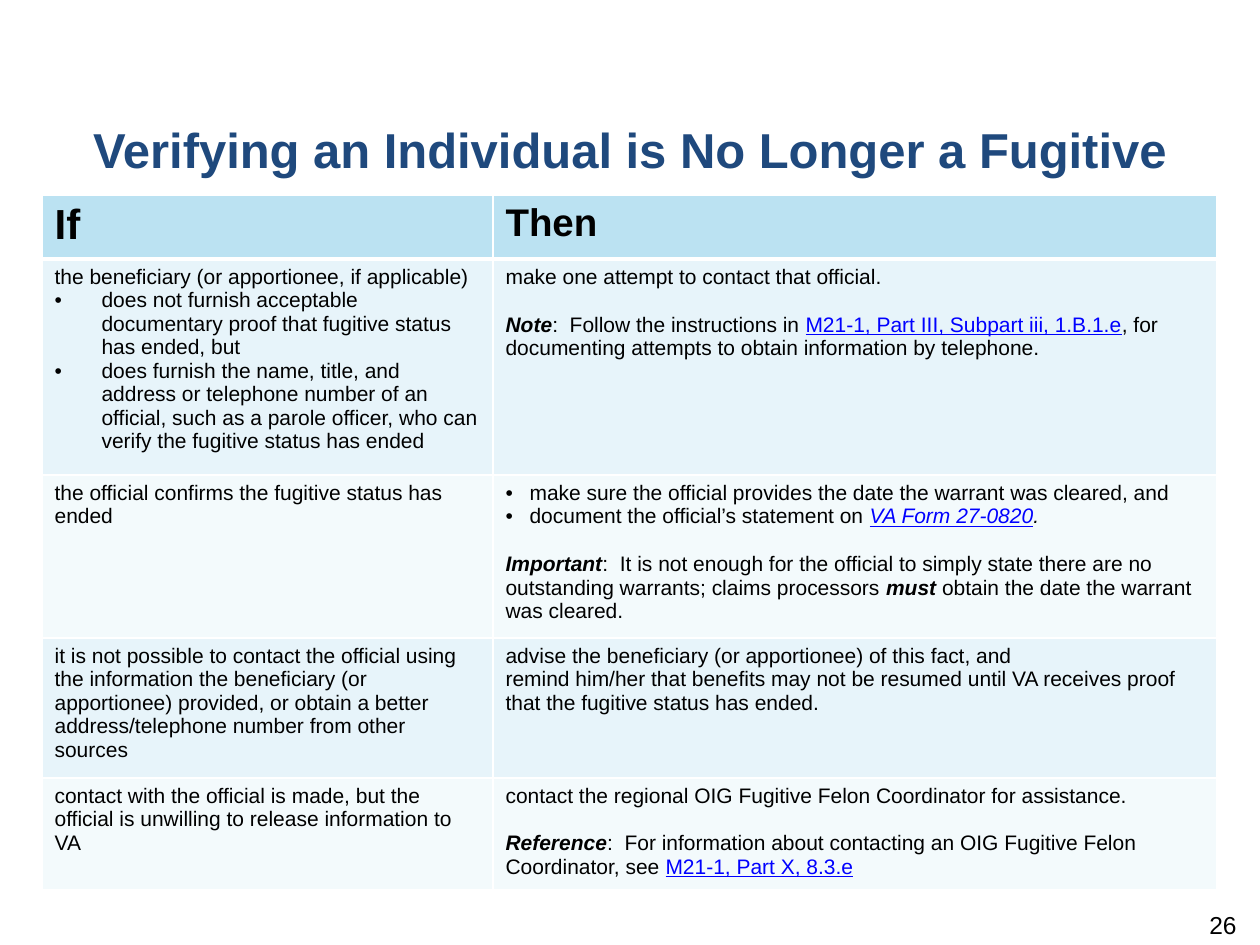
from dataclasses import dataclass

from lxml.etree import SubElement
from pptx import Presentation
from pptx.dml.color import RGBColor
from pptx.enum.text import MSO_ANCHOR as Anchor, PP_ALIGN as Align
from pptx.oxml.ns import qn
from pptx.util import Emu, Pt

EMU_PER_PX = 914400 / 126
FONT = "Arial"
BLACK, WHITE, NAVY, LINK_BLUE = "000000", "FFFFFF", "1F497D", "0000FF"
HEADER_FILL, BAND_FILLS = "BBE2F2", ("E7F4FA", "F3FAFC")
BODY_SIZE, LINE_GAP = 12, 13.8
COLUMN_WIDTHS = (451, 724)
ROW_HEIGHTS = (64, 216, 154, 140, 106)


@dataclass(frozen=True)
class Run:
    text: str
    bold: bool = False
    italic: bool = False
    link: bool = False
    size: int = BODY_SIZE
    color: str = BLACK


@dataclass(frozen=True)
class Para:
    runs: tuple[Run, ...]
    indent: int = 0  # px; bulleted when not zero
    gap: bool = False  # one line of space before


def px(n: int) -> Emu:
    return Emu(round(n * EMU_PER_PX))


def rgb(color: str) -> RGBColor:
    return RGBColor.from_string(color)


def plain(text: str) -> Para:
    return Para((Run(text),))


def bullet(indent: int, *runs: Run) -> Para:
    return Para(runs, indent=indent)


def remark(label: str, *runs: Run) -> Para:
    """A spaced paragraph that opens with a bold italic label."""
    return Para((Run(label, bold=True, italic=True), *runs), gap=True)


def heading(text: str, size: int) -> Para:
    return Para((Run(text, bold=True, size=size),))


def add_run(p, run: Run) -> None:
    r = p.add_run()
    r.text = run.text
    font = r.font
    font.name, font.size = FONT, Pt(run.size)
    font.bold, font.italic, font.underline = run.bold, run.italic, run.link
    font.color.rgb = rgb(LINK_BLUE if run.link else run.color)


def fill_text(tf, paras: tuple[Para, ...]) -> None:
    for i, para in enumerate(paras):
        p = tf.add_paragraph() if i else tf.paragraphs[0]
        if para.gap:
            p.space_before = Pt(LINE_GAP)
        if para.indent:
            pPr = p._p.get_or_add_pPr()
            pPr.set("marL", str(px(para.indent)))
            pPr.set("indent", str(-px(para.indent)))
            SubElement(pPr, qn("a:buFont"), typeface=FONT)
            SubElement(pPr, qn("a:buChar"), char="•")
        for run in para.runs:
            add_run(p, run)


def add_text(slide, box: tuple[int, int, int, int], run: Run, align: Align, top_inset: int) -> None:
    tf = slide.shapes.add_textbox(*map(px, box)).text_frame
    tf.word_wrap, tf.vertical_anchor = True, Anchor.TOP
    tf.margin_top = px(top_inset)
    fill_text(tf, (Para((run,)),))
    tf.paragraphs[0].alignment = align
    tf.paragraphs[0].space_after = Pt(6)


def set_borders(cell, top: int, bottom: int) -> None:
    tcPr = cell._tc.get_or_add_tcPr()
    for side, width in (("L", 1), ("R", 1), ("T", top), ("B", bottom)):
        ln = SubElement(tcPr, qn(f"a:ln{side}"), w=str(Pt(width)))
        SubElement(SubElement(ln, qn("a:solidFill")), qn("a:srgbClr"), val=WHITE)


def add_rules_table(slide, left: int, top: int, rows) -> None:
    frame = slide.shapes.add_table(len(rows), len(COLUMN_WIDTHS), px(left), px(top),
                                   px(sum(COLUMN_WIDTHS)), px(sum(ROW_HEIGHTS)))
    table = frame.table
    table.horz_banding = False
    for column, width in zip(table.columns, COLUMN_WIDTHS):
        column.width = px(width)
    for i, (row, height) in enumerate(zip(rows, ROW_HEIGHTS)):
        table.rows[i].height = px(height)
        for j, paras in enumerate(row):
            cell = table.cell(i, j)
            set_borders(cell, top=3 if i == 1 else 1, bottom=3 if i == 0 else 1)
            cell.fill.solid()
            cell.fill.fore_color.rgb = rgb(BAND_FILLS[(i - 1) % 2] if i else HEADER_FILL)
            fill_text(cell.text_frame, paras)


ROWS = (
    ((heading("If", 24),), (heading("Then", 22),)),
    (
        (
            plain("the beneficiary (or apportionee, if applicable)"),
            bullet(47, Run("does not furnish acceptable documentary proof that fugitive "
                           "status has ended, but")),
            bullet(47, Run("does furnish the name, title, and address or telephone number of an "
                           "official, such as a parole officer, who can verify the fugitive "
                           "status has ended")),
        ),
        (
            plain("make one attempt to contact that official."),
            remark("Note", Run(":  Follow the instructions in "),
                   Run("M21-1, Part III, Subpart iii, 1.B.1.e", link=True),
                   Run(", for documenting attempts to obtain information by telephone.")),
        ),
    ),
    (
        (plain("the official confirms the fugitive status has ended"),),
        (
            bullet(24, Run("make sure the official provides the date the warrant was "
                           "cleared, and")),
            bullet(24, Run("document the official’s statement on "),
                   Run("VA Form 27-0820", italic=True, link=True), Run(".", italic=True)),
            remark("Important",
                   Run(":  It is not enough for the official to simply state there are no "
                       "outstanding warrants; claims processors "),
                   Run("must", bold=True, italic=True),
                   Run(" obtain the date the warrant was cleared.")),
        ),
    ),
    (
        (plain("it is not possible to contact the official using the information the "
               "beneficiary (or apportionee) provided, or obtain a better address/telephone "
               "number from other sources"),),
        (
            plain("advise the beneficiary (or apportionee) of this fact, and"),
            plain("remind him/her that benefits may not be resumed until VA receives proof "
                  "that the fugitive status has ended."),
        ),
    ),
    (
        (plain("contact with the official is made, but the official is unwilling to release "
               "information to VA"),),
        (
            plain("contact the regional OIG Fugitive Felon Coordinator for assistance."),
            remark("Reference",
                   Run(":  For information about contacting an OIG Fugitive Felon "
                       "Coordinator, see "),
                   Run("M21-1, Part X, 8.3.e", link=True)),
        ),
    ),
)


def main() -> None:
    prs = Presentation()
    prs.slide_width, prs.slide_height = px(1260), px(945)
    slide = prs.slides.add_slide(prs.slide_layouts[6])
    title = Run("Verifying an Individual is No Longer a Fugitive", bold=True, size=28, color=NAVY)
    add_text(slide, (0, 110, 1260, 111), title, Align.CENTER, top_inset=10)
    add_rules_table(slide, 42, 195, ROWS)
    add_text(slide, (955, 910, 294, 50), Run("26", size=14), Align.RIGHT, top_inset=0)
    prs.save("out.pptx")


if __name__ == "__main__":
    main()
